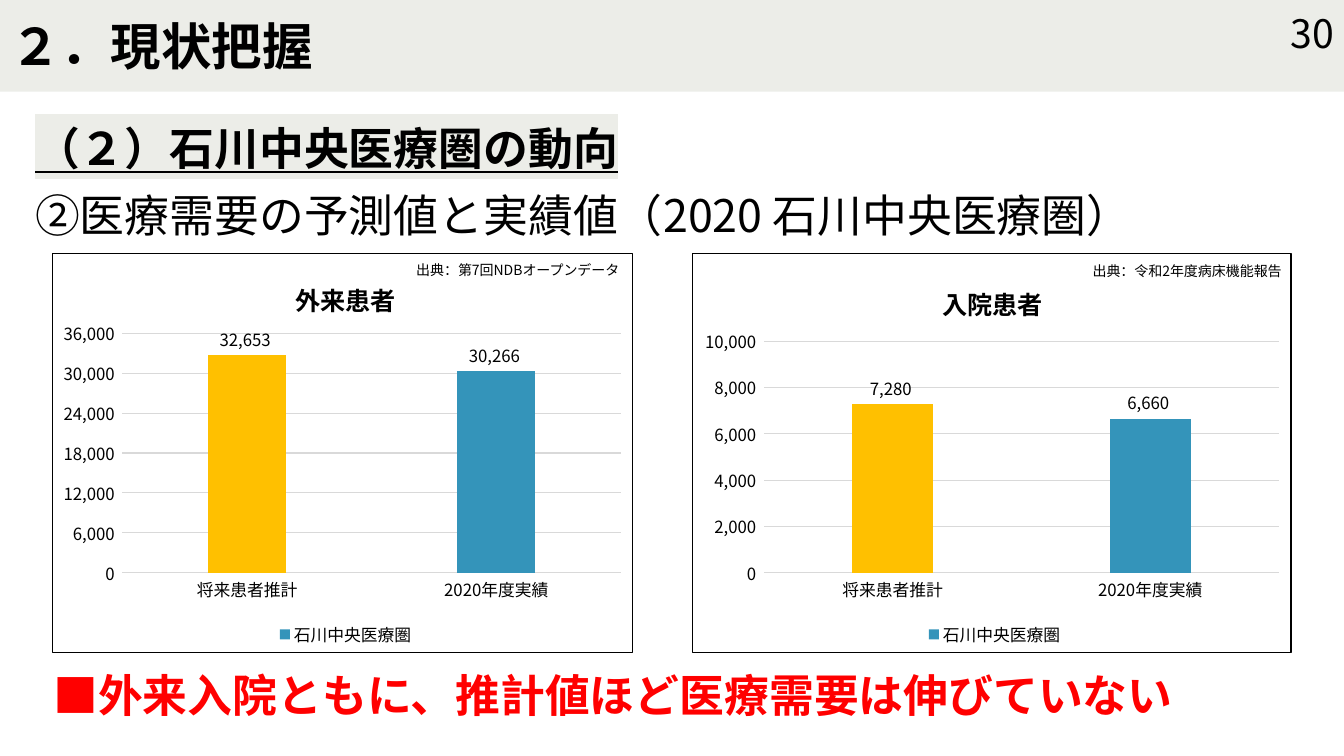
from pptx import Presentation
from pptx.chart.data import CategoryChartData
from pptx.dml.color import RGBColor
from pptx.enum.chart import XL_CHART_TYPE, XL_LABEL_POSITION, XL_LEGEND_POSITION, XL_TICK_MARK
from pptx.enum.text import MSO_ANCHOR, PP_ALIGN
from pptx.oxml import parse_xml
from pptx.oxml.ns import nsdecls
from pptx.util import Inches, Pt

COLUMN = XL_CHART_TYPE.COLUMN_CLUSTERED
OUTER = XL_LABEL_POSITION.OUTSIDE_END
BOTTOM = XL_LEGEND_POSITION.BOTTOM
NO_TICK = XL_TICK_MARK.NONE
TOP, MIDDLE = MSO_ANCHOR.TOP, MSO_ANCHOR.MIDDLE
LEFT, RIGHT = PP_ALIGN.LEFT, PP_ALIGN.RIGHT

FONT = "Noto Sans CJK JP"
FORMAT = r"#,##0_);\(#,##0\)"
HEX = {"black": "000000", "white": "FFFFFF", "band": "ECEDE8", "red": "FF0000",
       "grid": "D9D9D9", "blue": "3494BA", "gold": "FFC000"}


class Deck:
    """Holds the style and the current slide."""

    def __init__(self):
        self.prs = Presentation()
        self.prs.slide_width = Inches(13.33)
        self.prs.slide_height = Inches(7.5)
        self.slide = self.prs.slides.add_slide(self.prs.slide_layouts[5])

    def color(self, name):
        return RGBColor.from_string(HEX[name])

    def paint(self, fill, name):
        fill.solid()
        fill.fore_color.rgb = self.color(name)

    def style(self, font, size, color="black", **more):
        for key, value in {"name": FONT, "size": Pt(size), "bold": False, **more}.items():
            setattr(font, key, value)
        font.color.rgb = self.color(color)

    def asian(self, root):
        """Give East Asian text the same typeface as Latin text."""
        for latin in root.xpath(".//a:latin"):
            latin.addnext(parse_xml(f'<a:ea {nsdecls("a")} typeface="{FONT}"/>'))

    def label(self, shape, text, size, align=LEFT, anchor=TOP, mark=None, **more):
        frame = shape.text_frame
        frame.word_wrap = True
        frame.vertical_anchor = anchor
        para = frame.paragraphs[0]
        para.alignment = align
        run = para.add_run()
        run.text = text
        self.style(run.font, size, **more)
        if mark:
            light = parse_xml(f'<a:highlight {nsdecls("a")}><a:srgbClr val="{HEX[mark]}"/></a:highlight>')
            run._r.xpath("./a:rPr/a:latin")[0].addprevious(light)
        self.asian(run._r)
        return para

    def title(self, box, text, size):
        shape = self.slide.shapes.title
        for key, value in zip(("left", "top", "width", "height"), box):
            setattr(shape, key, Inches(value))
        self.paint(shape.fill, "band")
        self.label(shape, text, size, anchor=MIDDLE, bold=True)

    def text(self, box, text, size, **more):
        shape = self.slide.shapes.add_textbox(*map(Inches, box))
        return self.label(shape, text, size, **more)

    def place(self, part, index, **spots):
        """Set a manual layout, in fractions of the chart."""
        for old in part.xpath("./c:layout"):
            part.remove(old)
        inner = '<c:layoutTarget val="inner"/>' if index == 0 else ""
        modes = "".join(f'<c:{key}Mode val="edge"/>' for key in "xy")
        sizes = "".join(f'<c:{key} val="{value}"/>' for key, value in spots.items())
        part.insert(index, parse_xml(
            f'<c:layout {nsdecls("c")}><c:manualLayout>{inner}{modes}{sizes}'
            '</c:manualLayout></c:layout>'))

    def box(self, line=""):
        """White chart background with an optional outline."""
        return parse_xml(
            f'<c:spPr {nsdecls("c", "a")}><a:solidFill><a:srgbClr val="{HEX["white"]}"/>'
            f'</a:solidFill>{line}</c:spPr>')

    def chart(self, box, name, values, peak, step, head, plot):
        data = CategoryChartData(number_format=FORMAT)
        data.categories = ["将来患者推計", "2020年度実績"]
        data.add_series("石川中央医療圏", values)
        chart = self.slide.shapes.add_chart(COLUMN, *map(Inches, box), data).chart
        self.style(chart.font, 10)

        # Title
        chart.has_title = True
        para = chart.chart_title.text_frame.paragraphs[0]
        run = para.add_run()
        run.text = name
        self.style(run.font, 18, bold=True)

        # Axes
        for axis in (chart.category_axis, chart.value_axis):
            axis.major_tick_mark = axis.minor_tick_mark = NO_TICK
            self.style(axis.tick_labels.font, 12)
        value = chart.value_axis
        value.minimum_scale, value.maximum_scale, value.major_unit = 0, peak, step
        value.tick_labels.number_format = FORMAT
        value.tick_labels.number_format_is_linked = False
        value.format.line.fill.background()
        for line in (chart.category_axis.format.line, value.major_gridlines.format.line):
            line.width = Pt(0.75)
            line.color.rgb = self.color("grid")

        # Columns
        bars = chart.plots[0]
        bars.gap_width, bars.overlap, bars.vary_by_categories = 219, -27, False
        series = bars.series[0]
        self.paint(series.format.fill, "blue")
        self.paint(series.points[0].format.fill, "gold")
        labels = series.data_labels
        for key, setting in {"show_value": True, "position": OUTER, "number_format": FORMAT,
                             "number_format_is_linked": False}.items():
            setattr(labels, key, setting)
        self.style(labels.font, 12)

        # Legend
        chart.has_legend = True
        chart.legend.position = BOTTOM
        chart.legend.include_in_layout = False
        self.style(chart.legend.font, 12)

        # Layout, frame and typeface
        root = chart._chartSpace
        legend = root.xpath(".//c:legend")[0]
        self.place(root.xpath(".//c:plotArea")[0], 0, x=0.12, y=plot[0], w=0.86, h=plot[1])
        self.place(root.xpath("./c:chart/c:title")[0], 1, x=0.41, y=head)
        self.place(legend, 1, x=0.38, y=0.92, w=0.25, h=0.08)
        legend.xpath("./c:txPr")[0].addprevious(self.box())
        edge = f'<a:ln w="9525"><a:solidFill><a:srgbClr val="{HEX["black"]}"/></a:solidFill></a:ln>'
        root.xpath("./c:chart")[0].addnext(self.box(edge))
        self.asian(root)


def main():
    deck = Deck()

    # Heading band and page number
    deck.title((0, 0, 13.33, 0.91), "２．現状把握", 36)
    deck.text((10.08, 0.13, 3.25, 0.4), "30", 28, align=RIGHT, anchor=MIDDLE)

    # Section headings
    deck.text((0.25, 1.15, 12.83, 0.64), "（２）石川中央医療圏の動向", 32,
              mark="band", bold=True, underline=True)
    deck.text((0.25, 1.81, 11.6, 0.64), "②医療需要の予測値と実績値（2020 石川中央医療圏）", 32,
              anchor=MIDDLE)

    # Charts
    deck.chart((6.86, 2.51, 5.95, 3.97), "入院患者", (7280, 6660), 10000, 2000, 0.06, (0.22, 0.58))
    deck.chart((0.52, 2.51, 5.76, 3.97), "外来患者", (32653, 30266), 36000, 6000, 0.05, (0.2, 0.6))

    # Conclusion
    para = deck.text((0.43, 6.58, 11.6, 0.8), "■外来入院ともに、推計値ほど医療需要は伸びていない", 32,
                     color="red", bold=True)
    hang = Inches(0.39)
    para._p.get_or_add_pPr().set("marL", str(hang))
    para._p.get_or_add_pPr().set("indent", str(-hang))

    # Sources
    for box, note in (((3.82, 2.54, 2.42, 0.27), "出典：第7回NDBオープンデータ"),
                      ((10.61, 2.55, 2.2, 0.27), "出典：令和2年度病床機能報告")):
        deck.text(box, note, 10, align=RIGHT, anchor=MIDDLE)

    deck.prs.save("out.pptx")


if __name__ == "__main__":
    main()
